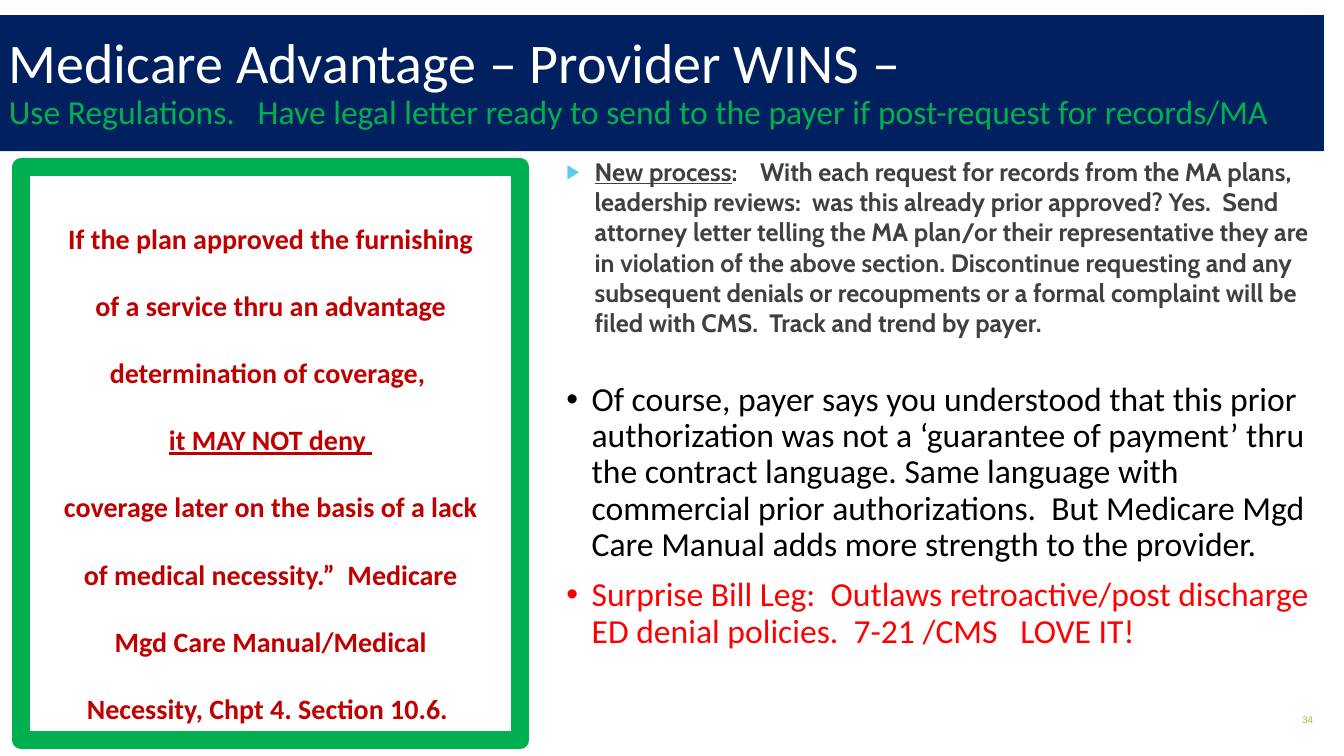
"""Build the Medicare Advantage provider wins slide."""
import pptx
import pptx.dml.color
import pptx.enum.shapes
import pptx.enum.text
import pptx.oxml
import pptx.oxml.ns
import pptx.util

Inches = pptx.util.Inches
Pt = pptx.util.Pt
RGBColor = pptx.dml.color.RGBColor
Align = pptx.enum.text.PP_ALIGN
Anchor = pptx.enum.text.MSO_ANCHOR

NAVY = RGBColor(0x00, 0x20, 0x60)
GREEN = RGBColor(0x00, 0xB0, 0x50)
DARK_RED = RGBColor(0xC0, 0x00, 0x00)
RED = RGBColor(0xFF, 0x00, 0x00)
GREY = RGBColor(0x40, 0x40, 0x40)
SKY = RGBColor(0x5F, 0xCB, 0xEF)
LIME = RGBColor(0x90, 0xC2, 0x26)
BLACK = RGBColor(0x00, 0x00, 0x00)
WHITE = RGBColor(0xFF, 0xFF, 0xFF)

TITLE = "Medicare Advantage – Provider WINS – "
SUBTITLE = ("Use Regulations.   Have legal letter ready to send to the payer "
            "if post-request for records/MA")
QUOTE = [
    ("If the plan approved the furnishing of a service thru an advantage "
     "determination of coverage, ", False),
    ("it MAY NOT deny ", True),
    ("coverage later on the basis of a lack of medical necessity.”  Medicare "
     "Mgd Care Manual/Medical Necessity, Chpt 4. Section 10.6. ", False),
]
PROCESS = (":    With each request for records from the MA plans, leadership "
           "reviews:  was this already prior approved? Yes.  Send attorney "
           "letter telling the MA plan/or their representative they are in "
           "violation of the above section. Discontinue requesting and any "
           "subsequent denials or recoupments or a formal complaint will be "
           "filed with CMS.  Track and trend by payer.  ")
PAYER = ("Of course, payer says you understood that this prior authorization "
         "was not a ‘guarantee of payment’ thru the contract language. Same "
         "language with commercial prior authorizations.  But Medicare Mgd "
         "Care Manual adds more strength to the provider.")
SURPRISE = ("Surprise Bill Leg:  Outlaws retroactive/post discharge ED denial "
            "policies.  7-21 /CMS   LOVE IT!")


def set_font(font, name, size, color, bold=False):
    """Set typeface, size, colour and weight."""
    font.name = name
    font.size = Pt(size)
    font.color.rgb = color
    font.bold = bold


def add_run(paragraph, text, underline=False):
    """Append a run of text and return it."""
    run = paragraph.add_run()
    run.text = text
    if underline:
        run.font.underline = True
    return run


def add_text_box(slide, left, top, width, height):
    """Add a wrapping text box and return its text frame."""
    box = slide.shapes.add_textbox(
        Inches(left), Inches(top), Inches(width), Inches(height))
    box.text_frame.word_wrap = True
    return box.text_frame


def add_rectangle(slide, left, top, width, height):
    """Add a rectangle without shadow and return it."""
    shape = slide.shapes.add_shape(
        pptx.enum.shapes.MSO_SHAPE.RECTANGLE,
        Inches(left), Inches(top), Inches(width), Inches(height))
    shape.shadow.inherit = False
    return shape


def set_bullet(paragraph, character, color, indent, percent=100):
    """Give a paragraph a hanging bullet."""
    properties = paragraph._p.get_or_add_pPr()
    properties.set("marL", str(Inches(indent)))
    properties.set("indent", str(-Inches(indent)))
    namespace = pptx.oxml.ns.nsdecls("a")
    for markup in (
            f'<a:buClr {namespace}><a:srgbClr val="{color}"/></a:buClr>',
            f'<a:buSzPct {namespace} val="{percent * 1000}"/>',
            f'<a:buFont {namespace} typeface="Arial"/>',
            f'<a:buChar {namespace} char="{character}"/>'):
        properties.append(pptx.oxml.parse_xml(markup))


def add_title_band(slide):
    """Add the navy band with the title and subtitle."""
    band = add_rectangle(slide, -0.01, 0.15, 13.14, 1.35)
    band.fill.solid()
    band.fill.fore_color.rgb = NAVY
    band.line.fill.background()
    band.text_frame.word_wrap = True
    band.text_frame.vertical_anchor = Anchor.MIDDLE
    paragraph = band.text_frame.paragraphs[0]
    paragraph.alignment = Align.LEFT
    paragraph.line_spacing = 0.9
    set_font(add_run(paragraph, TITLE).font, "Calibri", 40, WHITE)
    paragraph.add_line_break()
    set_font(add_run(paragraph, SUBTITLE).font, "Calibri", 24, GREEN)


def add_quote(slide):
    """Add the green frame and the regulation quoted in it."""
    frame = add_rectangle(slide, 0.21, 1.66, 4.95, 5.68)
    frame.fill.background()
    frame.line.color.rgb = GREEN
    frame.line.width = Pt(13)
    text_frame = add_text_box(slide, 0.45, 1.81, 4.47, 5.39)
    for index, (text, underline) in enumerate(QUOTE):
        paragraph = text_frame.add_paragraph() if index else text_frame.paragraphs[0]
        paragraph.alignment = Align.CENTER
        paragraph.line_spacing = 2.0
        set_font(paragraph.font, "Calibri", 20, DARK_RED, bold=True)
        add_run(paragraph, text, underline)


def add_bullets(slide):
    """Add the process bullet and the two notes below it."""
    text_frame = add_text_box(slide, 5.52, 1.5, 7.6, 5.7)
    process = text_frame.paragraphs[0]
    process.space_before = Pt(7.5)
    set_bullet(process, "▶", SKY, 0.28, 80)
    set_font(process.font, "Cabin", 18, GREY, bold=True)
    add_run(process, "New process", underline=True)
    add_run(process, PROCESS)
    for text, color, space in ((PAYER, BLACK, 32), (SURPRISE, RED, 10)):
        paragraph = text_frame.add_paragraph()
        paragraph.line_spacing = 0.9
        paragraph.space_before = Pt(space)
        set_bullet(paragraph, "•", color, 0.25)
        set_font(paragraph.font, "Calibri", 24, color)
        add_run(paragraph, text)


def add_slide_number(slide):
    """Add the slide number at the lower right."""
    text_frame = add_text_box(slide, 10.12, 6.94, 3, 0.4)
    text_frame.vertical_anchor = Anchor.MIDDLE
    paragraph = text_frame.paragraphs[0]
    paragraph.alignment = Align.RIGHT
    set_font(paragraph.font, "Arial", 6.8, LIME)
    add_run(paragraph, "34")


def main():
    """Build and save the presentation."""
    presentation = pptx.Presentation()
    presentation.slide_width = Inches(13.33)
    presentation.slide_height = Inches(7.5)
    slide = presentation.slides.add_slide(presentation.slide_layouts[6])
    add_slide_number(slide)
    add_bullets(slide)
    add_quote(slide)
    add_title_band(slide)
    presentation.save("out.pptx")


if __name__ == "__main__":
    main()
